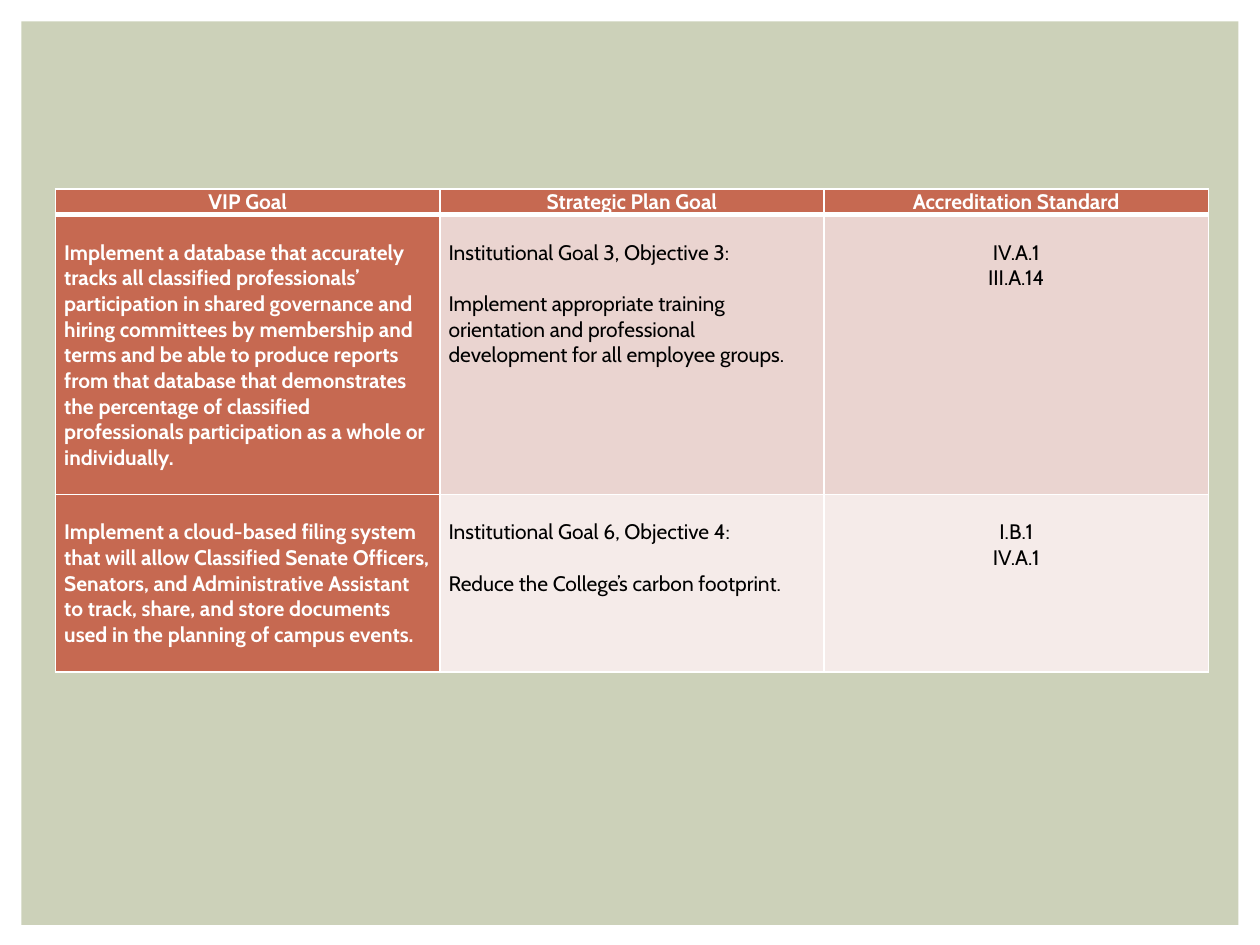
from lxml import etree
from pptx import Presentation
from pptx.dml.color import RGBColor
from pptx.enum import shapes, text
from pptx.oxml.ns import qn
from pptx.util import Inches, Pt


def paint(fill, color):
    fill.solid()
    fill.fore_color.rgb = RGBColor.from_string(color)


def write(frame, lines, color="000000", bold=False, align=text.PP_ALIGN.LEFT, gap=0):
    frame.word_wrap = True
    for n, line in enumerate(lines):
        para = frame.paragraphs[0] if n == 0 else frame.add_paragraph()
        para.alignment = align
        para.space_before = Pt(gap if n else 0)
        run = para.add_run()
        run.text = line
        run.font.name = "Cabin"
        run.font.size = Pt(12)
        run.font.bold = bold
        paint(run.font.fill, color)


deck = Presentation()
deck.slide_width = Inches(10)
deck.slide_height = Inches(7.5)
slide = deck.slides.add_slide(deck.slide_layouts[6])

panel = slide.shapes.add_shape(
    shapes.MSO_SHAPE.RECTANGLE, Inches(0.17), Inches(0.17), Inches(9.66), Inches(7.17))
panel.shadow.inherit = False
paint(panel.fill, "CCD1B9")
panel.line.fill.background()

rows = [
    [["VIP Goal"], ["Strategic Plan Goal"], ["Accreditation Standard"]],
    [["Implement a database that accurately tracks all classified professionals’ "
      "participation in shared governance and hiring committees by membership and terms "
      "and be able to produce reports from that database that demonstrates the percentage "
      "of classified professionals participation as a whole or individually."],
     ["Institutional Goal 3, Objective 3:",
      "Implement appropriate training orientation and professional development "
      "for all employee groups."],
     ["IV.A.1", "III.A.14"]],
    [["Implement a cloud-based filing system that will allow Classified Senate Officers, "
      "Senators, and Administrative Assistant to track, share, and store documents used "
      "in the planning of campus events."],
     ["Institutional Goal 6, Objective 4:", "Reduce the College’s carbon footprint."],
     ["I.B.1", "IV.A.1"]],
]
highs = [0.2, 2.22, 1.41]
tints = ["C66951", "EAD4D0", "F5EBE9"]

table = slide.shapes.add_table(
    3, 3, Inches(0.44), Inches(1.5), Inches(9.15), Inches(sum(highs))).table
for col in table.columns:
    col.width = Inches(3.05)

for r, row in enumerate(rows):
    table.rows[r].height = Inches(highs[r])
    for c, lines in enumerate(row):
        cell = table.cell(r, c)
        cell.margin_left = cell.margin_right = Inches(0.07)
        cell.margin_top = Inches(0.2 if r else 0)
        cell.margin_bottom = 0
        props = cell._tc.get_or_add_tcPr()
        for side in "LRTB":
            thick = (r, side) in [(0, "B"), (1, "T")]
            edge = etree.SubElement(props, qn("a:ln" + side), w=str(Pt(3 if thick else 1)))
            solid = etree.SubElement(edge, qn("a:solidFill"))
            etree.SubElement(solid, qn("a:srgbClr"), val="FFFFFF")
        head = r == 0 or c == 0
        paint(cell.fill, tints[0] if head else tints[r])
        mid = r == 0 or c == 2
        write(cell.text_frame, lines, color="FFFFFF" if head else "000000", bold=head,
              align=text.PP_ALIGN.CENTER if mid else text.PP_ALIGN.LEFT,
              gap=14.6 if c == 1 else 0)

deck.save("out.pptx")
